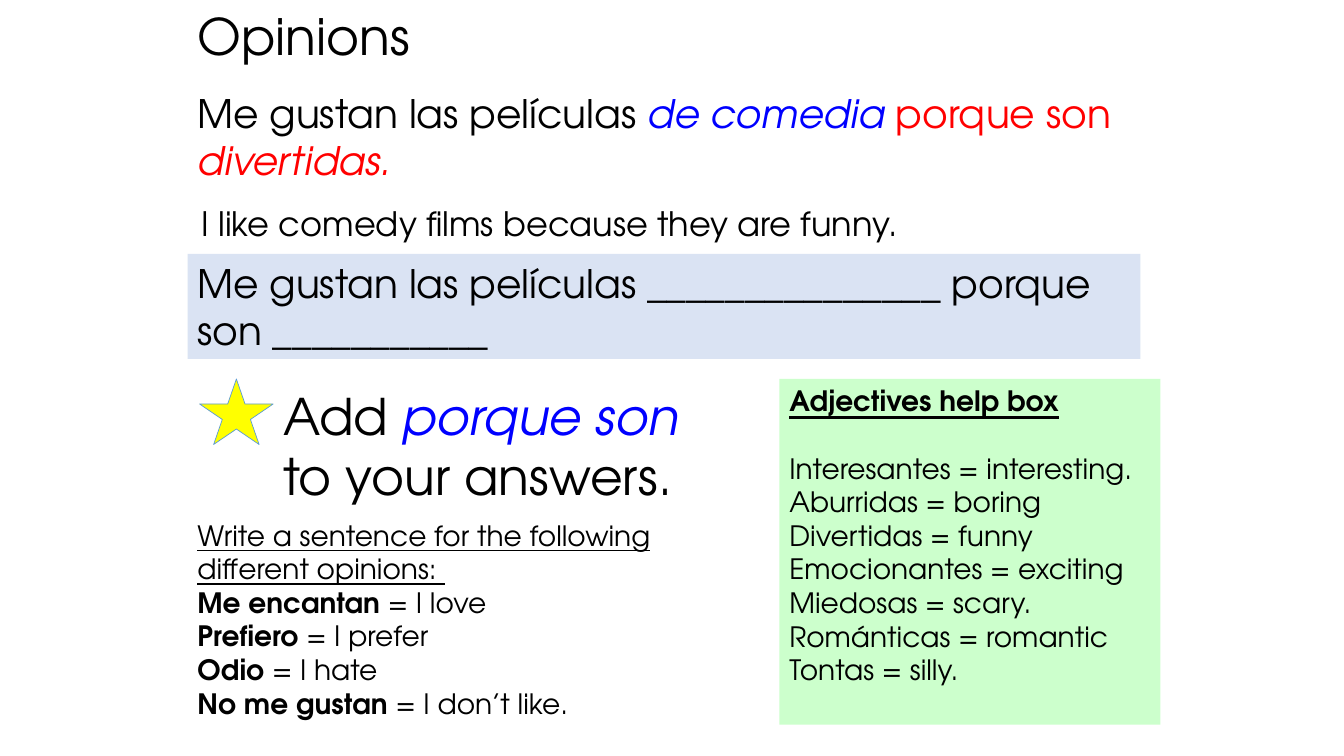
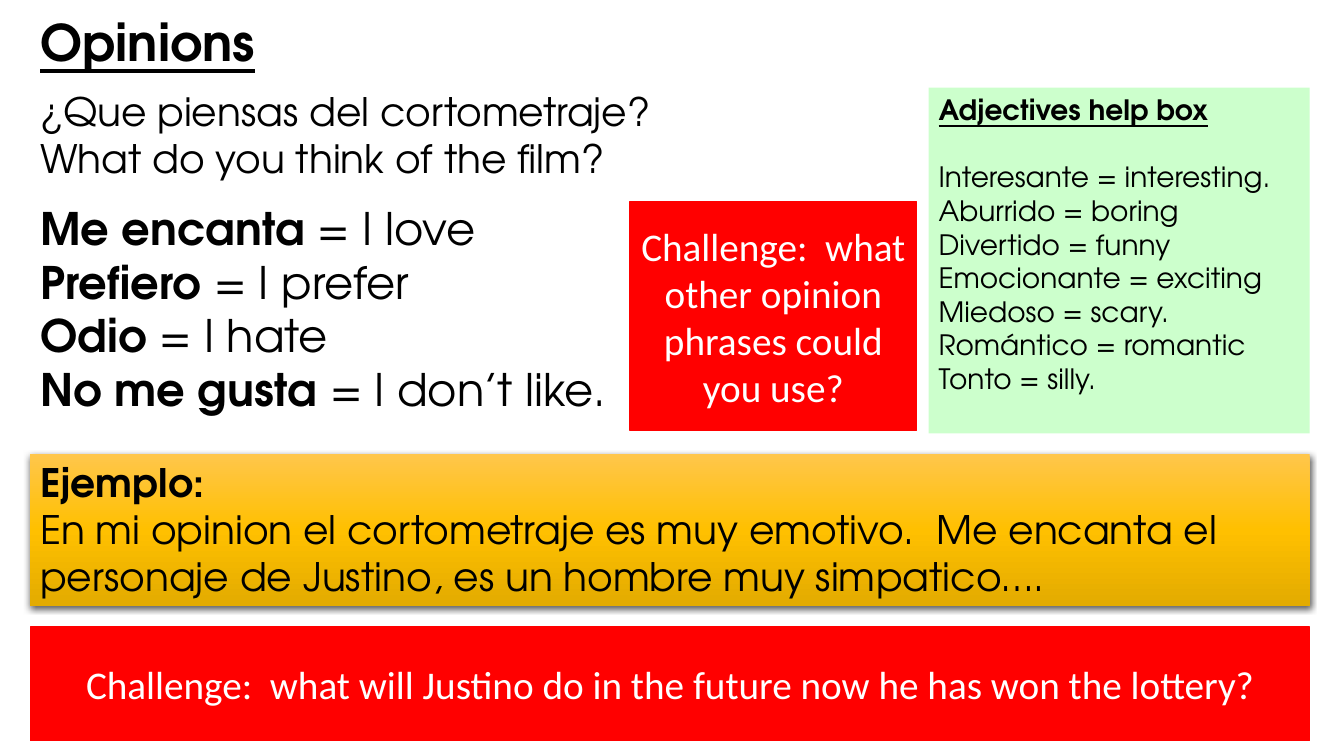
"""Build two Spanish lesson slides about giving opinions on films."""
import lxml.etree
import pptx
import pptx.dml.color
import pptx.enum.shapes
import pptx.enum.text
import pptx.oxml.ns
import pptx.util
from pptx.util import Inches

RGBColor = pptx.dml.color.RGBColor
Shape = pptx.enum.shapes.MSO_SHAPE
Align = pptx.enum.text.PP_ALIGN
Anchor = pptx.enum.text.MSO_ANCHOR

BLACK = RGBColor(0x00, 0x00, 0x00)
WHITE = RGBColor(0xFF, 0xFF, 0xFF)
BLUE = RGBColor(0x00, 0x00, 0xFF)
RED = RGBColor(0xFF, 0x00, 0x00)
YELLOW = RGBColor(0xFF, 0xFF, 0x00)
STAR_EDGE = RGBColor(0x5B, 0x9B, 0xD5)
PALE_BLUE = RGBColor(0xDA, 0xE3, 0xF3)
PALE_GREEN = RGBColor(0xCC, 0xFF, 0xCC)
GOLD_STOPS = [
    (0, RGBColor(0xFF, 0xC6, 0x4B)),
    (50, RGBColor(0xFF, 0xC0, 0x00)),
    (100, RGBColor(0xE3, 0xAB, 0x00)),
]

LESSON_FONT = "TeX Gyre Adventor"
CHALLENGE_FONT = "Calibri"
HELP_SIZE = (3.78, 3.43)
HELP_GAP = 24

BOLD = {"bold": True}
UNDERLINE = {"underline": True}
HEADING = {**BOLD, **UNDERLINE}
BLUE_ITALIC = {"color": BLUE, "italic": True}
RED_TEXT = {"color": RED}
RED_ITALIC = {"color": RED, "italic": True}

OPINION_MEANINGS = ["I love", "I prefer", "I hate", "I don’t like."]
PLURAL_OPINIONS = ["Me encantan", "Prefiero", "Odio", "No me gustan"]
SINGULAR_OPINIONS = ["Me encanta", "Prefiero", "Odio", "No me gusta"]

ADJECTIVE_MEANINGS = ["interesting.", "boring", "funny", "exciting", "scary.",
                      "romantic", "silly."]
PLURAL_ADJECTIVES = ["Interesantes", "Aburridas", "Divertidas", "Emocionantes",
                     "Miedosas", "Románticas", "Tontas"]
SINGULAR_ADJECTIVES = ["Interesante", "Aburrido", "Divertido", "Emocionante",
                       "Miedoso", "Romántico", "Tonto"]

FILM_SENTENCE = [[
    ("Me gustan las películas ", {}),
    ("de comedia ", BLUE_ITALIC),
    ("porque son ", RED_TEXT),
    ("divertidas.", RED_ITALIC),
]]
TRANSLATION = [[("I like comedy films because they are funny.", {})]]
GAP_SENTENCE = [[
    ("Me gustan las películas _______________ porque son ___________", {}),
]]
STAR_TASK = [[
    ("Add ", {}),
    ("porque son ", BLUE_ITALIC),
    ("to your answers.", {}),
]]
WRITING_TASK = [
    ("Write a sentence for the following different opinions: ", UNDERLINE),
]
QUESTION = [
    [("¿Que piensas del cortometraje?", {})],
    [("What do you think of the film?", {})],
]
EXAMPLE = [
    [("Ejemplo:", BOLD)],
    [("En mi opinion el cortometraje es muy emotivo.  Me encanta el "
      "personaje de Justino, es un hombre muy simpatico….", {})],
]
CHALLENGES = [
    ((6.25, 2, 2.84, 2.27),
     "Challenge:  what other opinion phrases could you use?"),
    ((0.3, 6.22, 12.69, 1.13),
     "Challenge:  what will Justino do in the future now he has won the lottery?"),
]


def opinion_lines(phrases):
    return [[(f"{phrase} ", BOLD), (f"= {meaning}", {})]
            for phrase, meaning in zip(phrases, OPINION_MEANINGS)]


def write(shape, paragraphs, size, font_name=LESSON_FONT, color=BLACK,
          alignment=Align.LEFT, anchor=Anchor.TOP):
    frame = shape.text_frame
    frame.word_wrap = True
    frame.vertical_anchor = anchor
    for index, runs in enumerate(paragraphs):
        paragraph = frame.add_paragraph() if index else frame.paragraphs[0]
        paragraph.alignment = alignment
        for text, changes in runs:
            run = paragraph.add_run()
            run.text = text
            values = {"name": font_name, "size": pptx.util.Pt(size),
                      "color": color, **changes}
            run.font.color.rgb = values.pop("color")
            for attribute, value in values.items():
                setattr(run.font, attribute, value)


def add_text(slide, box, paragraphs, size):
    write(slide.shapes.add_textbox(*map(Inches, box)), paragraphs, size)


def add_panel(slide, box, fill, line=None, line_width=1, kind=Shape.RECTANGLE):
    shape = slide.shapes.add_shape(kind, *map(Inches, box))
    shape.shadow.inherit = False
    shape.fill.solid()
    shape.fill.fore_color.rgb = fill
    if line is None:
        shape.line.fill.background()
    else:
        shape.line.color.rgb = line
        shape.line.width = pptx.util.Pt(line_width)
    return shape


def add_titled_slide(presentation, left, top, changes):
    slide = presentation.slides.add_slide(presentation.slide_layouts[5])
    title = slide.shapes.title
    box = {"left": left, "top": top, "width": 9.25, "height": 0.71}
    for attribute, value in box.items():
        setattr(title, attribute, Inches(value))
    write(title, [[("Opinions", changes)]], 36)
    return slide


def add_help_box(slide, left, top, adjectives):
    entries = [[(f"{adjective} = {meaning}", {})]
               for adjective, meaning in zip(adjectives, ADJECTIVE_MEANINGS)]
    shape = add_panel(slide, (left, top, *HELP_SIZE), PALE_GREEN)
    write(shape, [[("Adjectives help box", HEADING)], *entries], 20)
    shape.text_frame.paragraphs[1].space_before = pptx.util.Pt(HELP_GAP)


def add_color(parent, color):
    return lxml.etree.SubElement(parent, pptx.oxml.ns.qn("a:srgbClr"), val=str(color))


def make_golden(shape):
    qn = pptx.oxml.ns.qn
    shape.fill.gradient()
    shape.fill.gradient_angle = 270
    stops = shape.element.find(".//" + qn("a:gsLst"))
    for stop in list(stops):
        stops.remove(stop)
    for percent, color in GOLD_STOPS:
        add_color(lxml.etree.SubElement(stops, qn("a:gs"), pos=str(percent * 1000)), color)
    shadow = lxml.etree.SubElement(
        shape.element.find(".//" + qn("a:effectLst")), qn("a:outerShdw"),
        blurRad=str(pptx.util.Pt(4.5)), dist=str(pptx.util.Pt(1.5)),
        dir="5400000", algn="ctr", rotWithShape="0")
    lxml.etree.SubElement(add_color(shadow, BLACK), qn("a:alpha"), val="63000")


def build_sentence_slide(presentation):
    slide = add_titled_slide(presentation, 1.86, 0, {})
    add_text(slide, (1.86, 0.84, 9.92, 1.04), FILM_SENTENCE, 28)
    write(add_panel(slide, (1.86, 2.52, 9.45, 1.04), PALE_BLUE), GAP_SENTENCE, 28)
    add_text(slide, (1.9, 1.96, 9.61, 0.5), TRANSLATION, 24)
    add_text(slide, (2.71, 3.77, 4.33, 1.31), STAR_TASK, 36)
    add_help_box(slide, 7.73, 3.76, PLURAL_ADJECTIVES)
    add_text(slide, (1.86, 5.09, 5.69, 2.12),
             [WRITING_TASK, *opinion_lines(PLURAL_OPINIONS)], 20)
    add_panel(slide, (1.98, 3.76, 0.73, 0.65), YELLOW, STAR_EDGE, 0.5,
              Shape.STAR_5_POINT)


def build_film_slide(presentation):
    slide = add_titled_slide(presentation, 0.3, 0.06, HEADING)
    add_text(slide, (0.3, 0.82, 7.66, 1.04), QUESTION, 28)
    add_help_box(slide, 9.21, 0.87, SINGULAR_ADJECTIVES)
    add_text(slide, (0.3, 1.94, 7.91, 2.26), opinion_lines(SINGULAR_OPINIONS), 32)
    example = add_panel(slide, (0.3, 4.5, 12.69, 1.51), GOLD_STOPS[1][1])
    make_golden(example)
    write(example, EXAMPLE, 28)
    for box, text in CHALLENGES:
        write(add_panel(slide, box, RED, RED), [[(text, {})]], 28,
              CHALLENGE_FONT, WHITE, Align.CENTER, Anchor.MIDDLE)


def main():
    presentation = pptx.Presentation()
    presentation.slide_width = Inches(13.33)
    presentation.slide_height = Inches(7.5)
    build_sentence_slide(presentation)
    build_film_slide(presentation)
    presentation.save("out.pptx")


if __name__ == "__main__":
    main()
